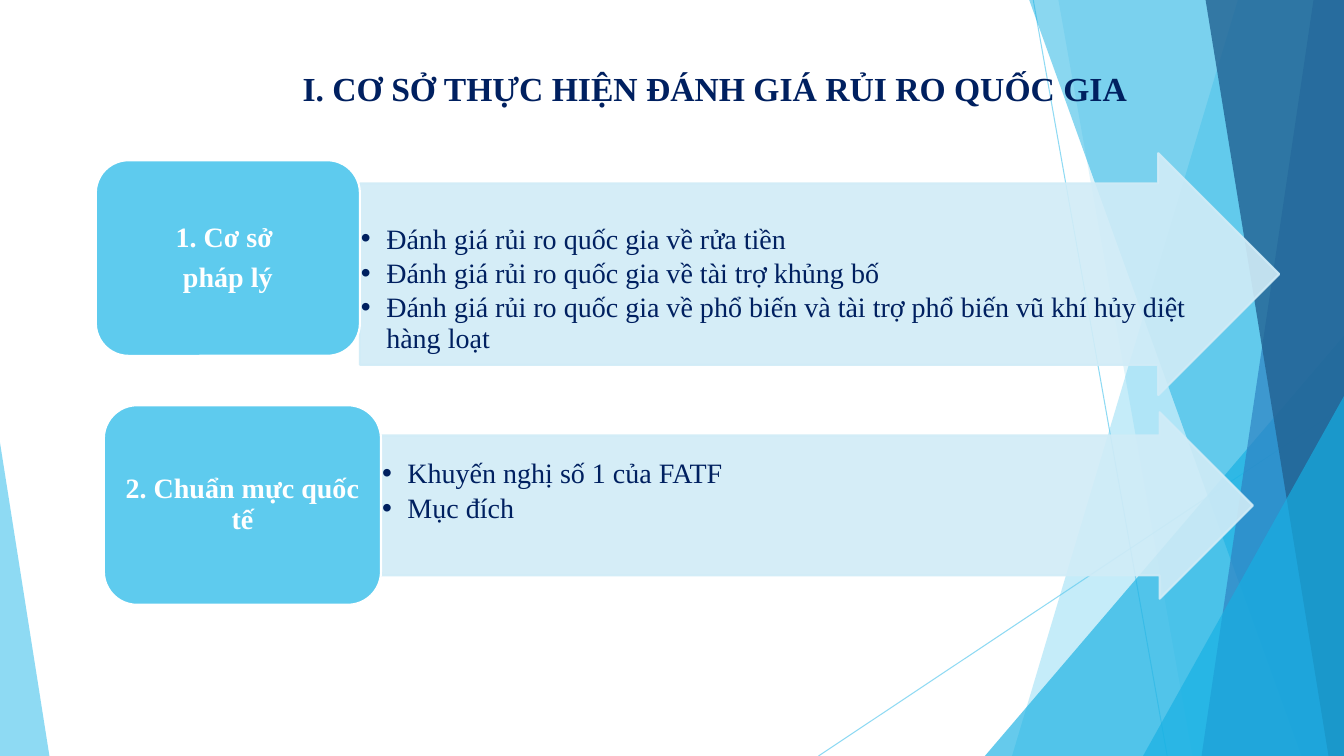
import dataclasses
import typing

import lxml.etree
import pptx
import pptx.dml.color
import pptx.enum.shapes
import pptx.enum.text
import pptx.oxml.ns
import pptx.shapes.autoshape
import pptx.util

SHAPES = pptx.enum.shapes.MSO_SHAPE
ALIGN = pptx.enum.text.PP_ALIGN
ANCHOR = pptx.enum.text.MSO_ANCHOR
qn = pptx.oxml.ns.qn

WIDTH = pptx.util.Inches(13.33)
HEIGHT = pptx.util.Inches(7.5)
FONT = "Times New Roman"
NAVY, WHITE = "002060", "FFFFFF"
SKY, LABEL, PALE = "5FCBEF", "5ECBEE", "D1ECF7"
CYAN, BLUE, DEEP = "16B0E3", "2E83C3", "226292"


class Box(typing.NamedTuple):
    left: float
    top: float
    width: float
    height: float


@dataclasses.dataclass
class Facet:
    top_x: float
    bottom_x: float
    color: str
    opacity: int


@dataclasses.dataclass
class Wedge:
    box: Box
    apex: float
    color: str
    opacity: int


@dataclasses.dataclass
class Topic:
    label_box: Box
    label: list[str]
    arrow_box: Box
    points: list[str]
    list_inset: float


RAYS = [(76.88, 0, 86.85, 100), (100, 53.73, 60.9, 100)]

BACKDROP = [
    Facet(92.1, 75.3, SKY, 36),
    Facet(78.75, 88.73, SKY, 20),
    Wedge(Box(73.28, 44.4, 26.72, 55.6), 1, CYAN, 66),
    Facet(76.58, 96.83, CYAN, 50),
    Facet(97.73, 89.4, BLUE, 70),
    Facet(89.7, 98.85, DEEP, 80),
    Wedge(Box(85.05, 52.4, 14.95, 47.6), 1, CYAN, 66),
    Wedge(Box(0, 58.53, 3.68, 41.47), 0, SKY, 70),
]

TOPICS = [
    Topic(
        Box(7.13, 21.2, 19.65, 25.87),
        ["1. Cơ sở ", "pháp lý"],
        Box(26.78, 20.27, 68.4, 32),
        [
            "Đánh giá rủi ro quốc gia về rửa tiền",
            "Đánh giá rủi ro quốc gia về tài trợ khủng bố",
            "Đánh giá rủi ro quốc gia về phổ biến và tài trợ phổ biến vũ khí hủy diệt hàng loạt",
        ],
        5.47,
    ),
    Topic(
        Box(7.73, 53.6, 20.62, 26.4),
        ["2. Chuẩn mực quốc tế"],
        Box(28.35, 54.53, 64.87, 24.67),
        ["Khuyến nghị số 1 của FATF", "Mục đích"],
        3.2,
    ),
]


def rgb(color: str) -> pptx.dml.color.RGBColor:
    return pptx.dml.color.RGBColor.from_string(color)


def across(share: float) -> int:
    return round(WIDTH * share / 100)


def down(share: float) -> int:
    return round(HEIGHT * share / 100)


def frame(box: Box) -> tuple[int, int, int, int]:
    return across(box.left), down(box.top), across(box.width), down(box.height)


def apply(target: typing.Any, values: dict[str, typing.Any]) -> None:
    for name, value in values.items():
        setattr(target, name, value)


def place(shape: typing.Any, box: Box) -> None:
    apply(shape, dict(zip(("left", "top", "width", "height"), frame(box))))


def set_opacity(shape: typing.Any, percent: int) -> None:
    for color in shape.element.spPr.iter(qn("a:srgbClr")):
        lxml.etree.SubElement(color, qn("a:alpha"), val=str(percent * 1000))


def paint(shape: pptx.shapes.autoshape.Shape, color: str, outline: str | None = None,
          opacity: int = 100) -> None:
    shape.shadow.inherit = False
    shape.fill.solid()
    shape.fill.fore_color.rgb = rgb(color)
    if outline:
        shape.line.color.rgb = rgb(outline)
        shape.line.width = pptx.util.Pt(1.5)
    else:
        shape.line.fill.background()
    if opacity < 100:
        set_opacity(shape, opacity)


def add_bullet(p: typing.Any) -> None:
    pPr = p._p.get_or_add_pPr()
    indent = across(1.88)
    pPr.set("marL", str(indent))
    pPr.set("indent", str(-indent))
    color = lxml.etree.SubElement(pPr, qn("a:buClr"))
    lxml.etree.SubElement(color, qn("a:srgbClr"), val=NAVY)
    lxml.etree.SubElement(pPr, qn("a:buFont"), typeface="Arial")
    lxml.etree.SubElement(pPr, qn("a:buChar"), char="•")


def write(shape: typing.Any, lines: list[str], size: int, color: str, bold: bool,
          align: ALIGN, anchor: ANCHOR, insets: Box, gap: float = 0,
          spacing: float = 1, bulleted: bool = False) -> None:
    tf = shape.text_frame
    apply(tf, {
        "word_wrap": True,
        "auto_size": pptx.enum.text.MSO_AUTO_SIZE.NONE,
        "vertical_anchor": anchor,
        "margin_left": across(insets.left),
        "margin_top": down(insets.top),
        "margin_right": across(insets.width),
        "margin_bottom": down(insets.height),
    })
    for i, line in enumerate(lines):
        p = tf.paragraphs[0] if i == 0 else tf.add_paragraph()
        if bulleted:
            add_bullet(p)
        apply(p, {"alignment": align, "line_spacing": spacing,
                  "space_before": pptx.util.Pt(gap if i else 0),
                  "space_after": pptx.util.Pt(0)})
        r = p.add_run()
        r.text = line
        apply(r.font, {"name": FONT, "size": pptx.util.Pt(size), "bold": bold})
        r.font.color.rgb = rgb(color)


def draw_ray(s: typing.Any, ray: tuple[float, float, float, float]) -> None:
    x1, y1, x2, y2 = ray
    line = s.shapes.add_connector(pptx.enum.shapes.MSO_CONNECTOR.STRAIGHT,
                                  across(x1), down(y1), across(x2), down(y2))
    line.line.color.rgb = rgb(SKY)
    line.line.width = pptx.util.Pt(0.75)
    set_opacity(line, 70)
    lxml.etree.SubElement(line.element.spPr, qn("a:effectLst"))


def draw_backdrop(s: typing.Any, part: Facet | Wedge) -> None:
    if isinstance(part, Facet):
        outline = s.shapes.build_freeform(across(part.top_x), 0)
        outline.add_line_segments([(WIDTH, 0), (WIDTH, HEIGHT),
                                   (across(part.bottom_x), HEIGHT)])
        shape = outline.convert_to_shape()
    else:
        shape = s.shapes.add_shape(SHAPES.ISOSCELES_TRIANGLE, *frame(part.box))
        shape.adjustments[0] = part.apex
    paint(shape, part.color, opacity=part.opacity)


def draw_topic(s: typing.Any, topic: Topic, body: typing.Any) -> None:
    box = topic.arrow_box
    arrow = s.shapes.add_shape(SHAPES.RIGHT_ARROW, *frame(box))
    arrow.adjustments[0] = 0.75
    paint(arrow, PALE, PALE, 90)

    head_share = box.height * 0.375 * HEIGHT / WIDTH
    place(body, Box(box.left, box.top + box.height / 8,
                    box.width - head_share, box.height * 0.75))
    write(body, topic.points, 20, NAVY, False, ALIGN.LEFT, ANCHOR.TOP,
          Box(0.08, topic.list_inset, 0.08, 0.13), 3, 0.9, True)
    s.shapes.element.append(body.element)

    label = s.shapes.add_shape(SHAPES.ROUNDED_RECTANGLE, *frame(topic.label_box))
    paint(label, LABEL, WHITE)
    write(label, topic.label, 20, WHITE, True, ALIGN.CENTER, ANCHOR.MIDDLE,
          Box(0.6, 0.53, 0.6, 0.53), 7, 0.9)


def main() -> None:
    prs = pptx.Presentation()
    apply(prs, {"slide_width": WIDTH, "slide_height": HEIGHT})
    s = prs.slides.add_slide(prs.slide_layouts.get_by_name("Two Content"))
    title, *bodies = s.placeholders
    for ray in RAYS:
        draw_ray(s, ray)
    for part in BACKDROP:
        draw_backdrop(s, part)
    place(title, Box(21.23, 2, 64.4, 19.33))
    write(title, ["I. CƠ SỞ THỰC HIỆN ĐÁNH GIÁ RỦI RO QUỐC GIA "], 24, NAVY, True,
          ALIGN.CENTER, ANCHOR.MIDDLE, Box(0, 1.73, 0, 1.73))
    s.shapes.element.append(title.element)
    for topic, body in zip(TOPICS, bodies):
        draw_topic(s, topic, body)
    prs.save("out.pptx")


if __name__ == "__main__":
    main()
